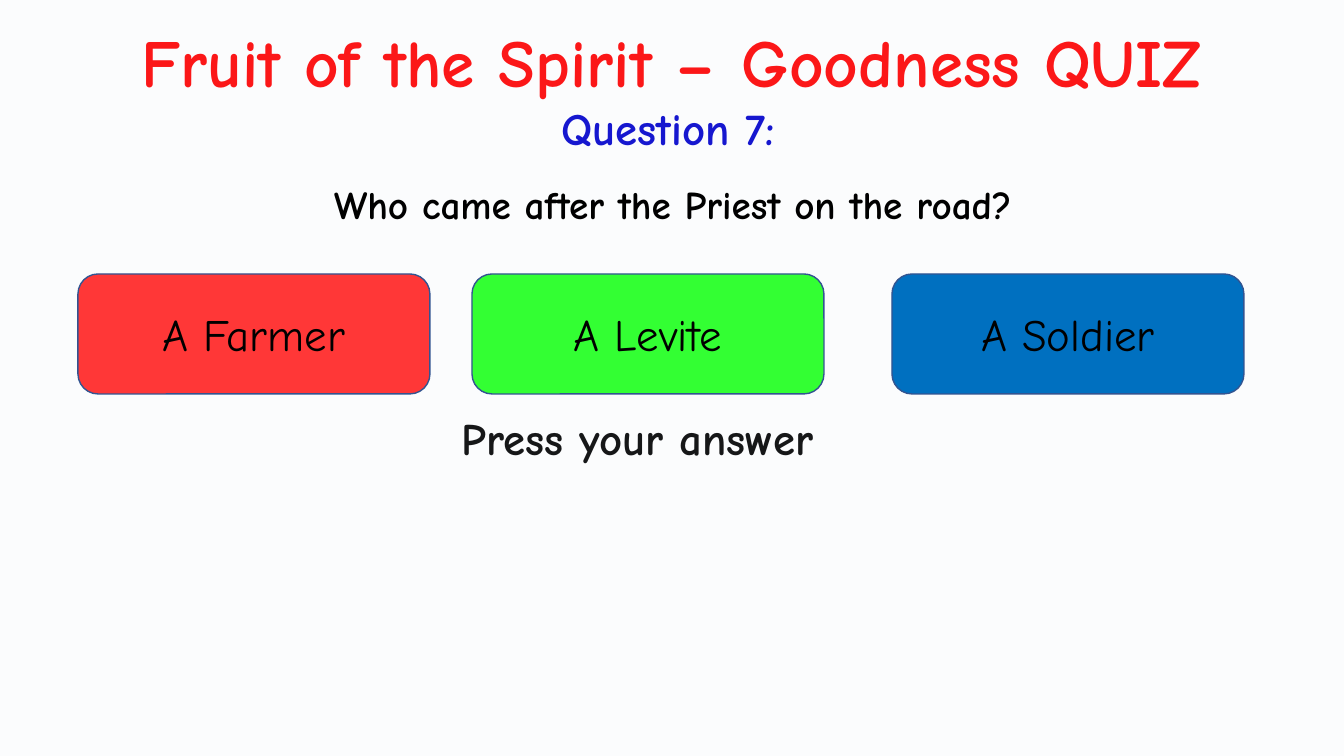
"""Build a quiz slide with a question and three coloured answer buttons."""
from typing import NamedTuple, Optional, Union

from lxml.etree import SubElement
from pptx import Presentation
from pptx.dml.color import RGBColor
from pptx.enum.shapes import MSO_SHAPE as Preset
from pptx.enum.text import MSO_ANCHOR as Anchor, MSO_AUTO_SIZE as AutoSize, PP_ALIGN as Align
from pptx.oxml.ns import qn
from pptx.util import Emu, Length, Pt

FONT = "Comic Neue"
RED = RGBColor(0xFF, 0x00, 0x00)
BLACK = RGBColor(0x00, 0x00, 0x00)
QUESTION_BLUE = RGBColor(0x00, 0x00, 0xCC)
VEIL_BLUE = RGBColor(0xDA, 0xE3, 0xF3)
OUTLINE_BLUE = RGBColor(0x32, 0x54, 0x91)
BUTTON_RED = RGBColor(0xFF, 0x37, 0x37)
BUTTON_GREEN = RGBColor(0x33, 0xFF, 0x33)
BUTTON_BLUE = RGBColor(0x00, 0x70, 0xC0)
EMU_PER_PX = 914400 / 100.8


class Box(NamedTuple):
    left: int
    top: int
    width: int
    height: int


class Label(NamedTuple):
    text: str
    box: Box
    size: int
    color: RGBColor = BLACK
    align: Align = Align.CENTER
    spacing: Optional[Union[float, Length]] = None
    before: int = 0


class Answer(NamedTuple):
    text: str
    left: int
    color: RGBColor


TITLE = Label("Fruit of the Spirit – Goodness QUIZ", Box(44, 15, 1255, 92), 48, RED)
PROMPT = Label("Press your answer", Box(452, 412, 678, 73), 32,
               align=Align.LEFT, spacing=0.9, before=7.5)
NUMBER = Label("Question 7:", Box(452, 96, 433, 65), 32, QUESTION_BLUE)._replace(
    box=Box(446, 96, 445, 65))
QUESTION = Label("Who came after the Priest on the road?", Box(68, 172, 1210, 73), 28,
                 spacing=Pt(36), before=10)
VEIL = Box(-43, -61, 1430, 880)
ANSWERS = (
    Answer("A Farmer", 78, BUTTON_RED),
    Answer("A Levite", 472, BUTTON_GREEN),
    Answer("A Soldier", 892, BUTTON_BLUE),
)


def px(value: int) -> Emu:
    """Turn pixels into EMU."""
    return Emu(round(value * EMU_PER_PX))


def write(shape, label: Label, bold: bool = True) -> None:
    """Put the label's text into the shape and format it."""
    shape.text_frame.text = label.text
    paragraph = shape.text_frame.paragraphs[0]
    paragraph.alignment = label.align
    paragraph.line_spacing = label.spacing
    paragraph.space_before = Pt(label.before)
    font = paragraph.font
    font.name, font.size, font.bold = FONT, Pt(label.size), bold
    font.color.rgb = label.color


def add_title(slide, label: Label) -> None:
    """Place and format the title placeholder."""
    title = slide.shapes.title
    title.left, title.top, title.width, title.height = map(px, label.box)
    frame = title.text_frame
    frame.word_wrap = False
    frame.auto_size = AutoSize.NONE
    frame.vertical_anchor = Anchor.TOP
    write(title, label)


def add_label(slide, label: Label) -> None:
    """Add a wrapping text box."""
    text_box = slide.shapes.add_textbox(*map(px, label.box))
    text_box.text_frame.word_wrap = True
    write(text_box, label)


def add_panel(slide, preset: Preset, box: Box, color: RGBColor):
    """Add a filled shape with a thin outline."""
    shape = slide.shapes.add_shape(preset, *map(px, box))
    shape.shadow.inherit = False
    shape.fill.solid()
    shape.fill.fore_color.rgb = color
    shape.line.color.rgb = OUTLINE_BLUE
    shape.line.width = Pt(1)
    return shape


def add_veil(slide) -> None:
    """Cover the slide with a nearly transparent tint."""
    veil = add_panel(slide, Preset.RECTANGLE, VEIL, VEIL_BLUE)
    color = veil.element.spPr.find(qn("a:solidFill")).find(qn("a:srgbClr"))
    SubElement(color, qn("a:alpha"), val="10000")


def add_answer(slide, answer: Answer) -> None:
    """Add one answer button."""
    box = Box(answer.left, 274, 352, 120)
    button = add_panel(slide, Preset.ROUNDED_RECTANGLE, box, answer.color)
    button.text_frame.vertical_anchor = Anchor.MIDDLE
    write(button, Label(answer.text, box, 32), bold=False)


def main() -> None:
    """Build and save the presentation."""
    presentation = Presentation()
    presentation.slide_width, presentation.slide_height = px(1344), px(756)
    slide = presentation.slides.add_slide(presentation.slide_layouts.get_by_name("Title Only"))
    add_title(slide, TITLE)
    add_label(slide, PROMPT)
    add_label(slide, NUMBER)
    add_veil(slide)
    for answer in ANSWERS:
        add_answer(slide, answer)
    add_label(slide, QUESTION)
    presentation.save("out.pptx")


if __name__ == "__main__":
    main()
